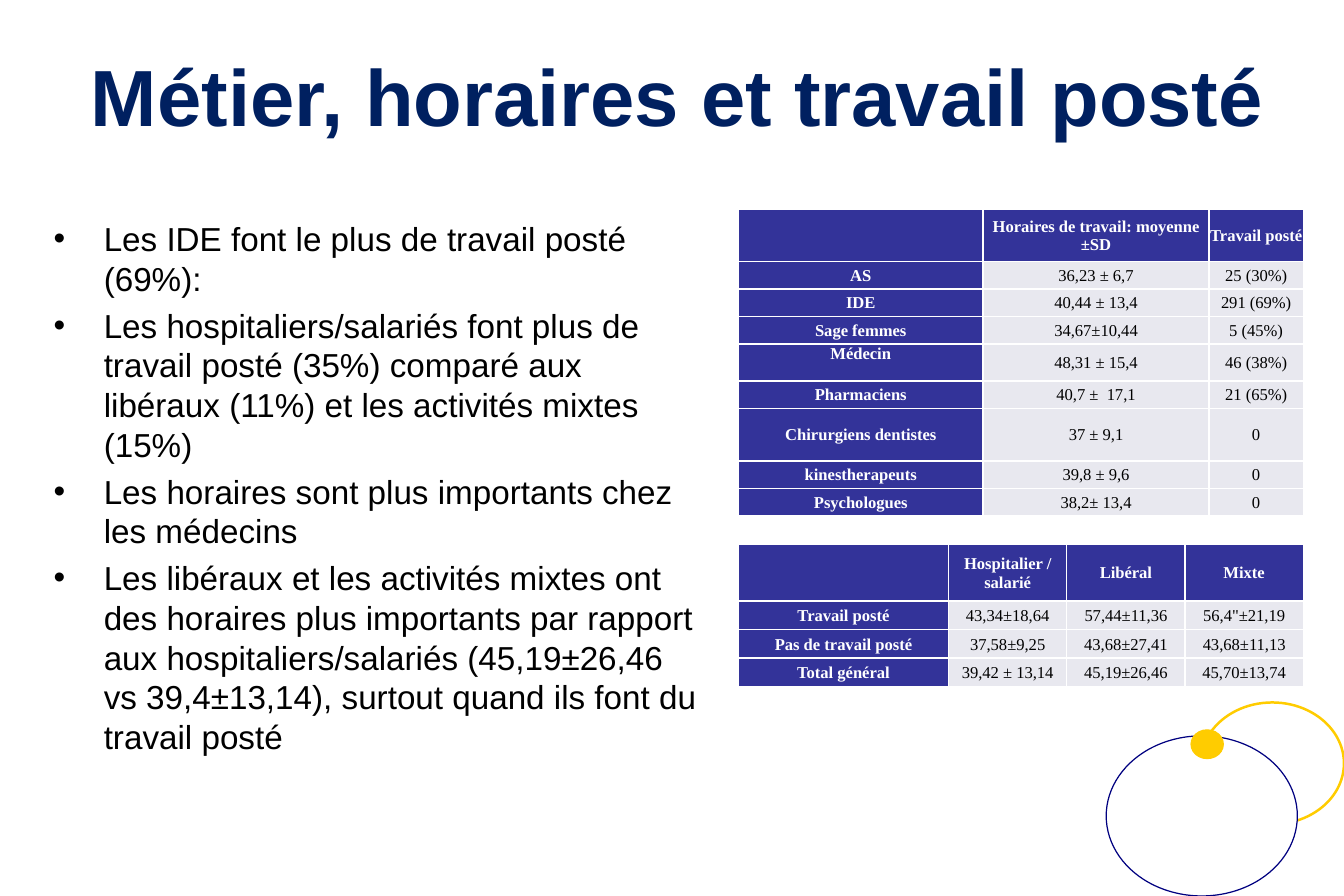
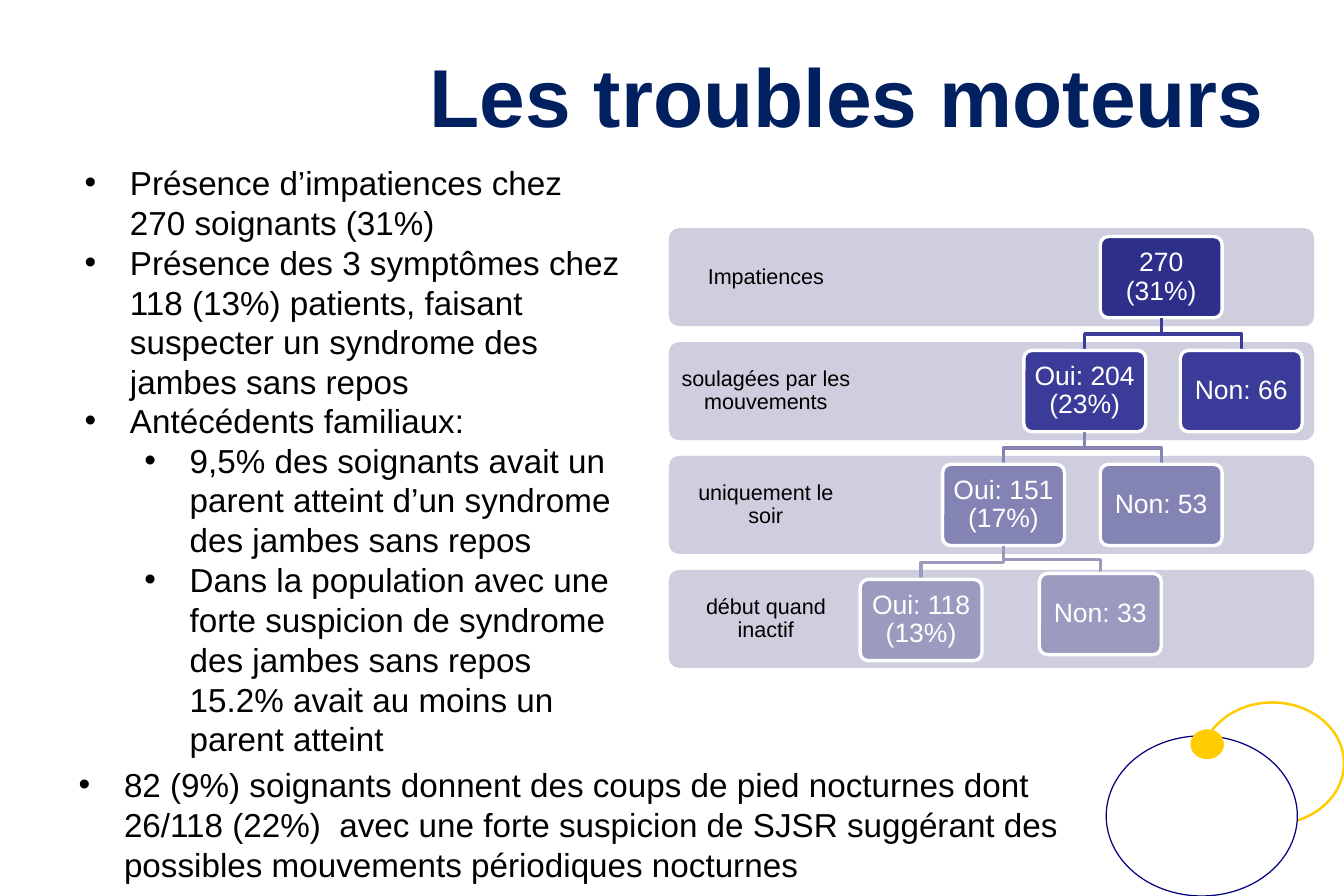
from lxml.etree import SubElement
from pptx import Presentation
from pptx.dml.color import RGBColor
from pptx.enum.shapes import MSO_SHAPE
from pptx.enum.text import MSO_ANCHOR, MSO_AUTO_SIZE, PP_ALIGN
from pptx.oxml.ns import qn
from pptx.util import Inches, Pt

WHITE = RGBColor(0xFF, 0xFF, 0xFF)
BLACK = RGBColor(0x00, 0x00, 0x00)
TITLE_NAVY = RGBColor(0x00, 0x20, 0x60)
RING_NAVY = RGBColor(0x00, 0x00, 0x80)
GOLD = RGBColor(0xFF, 0xCC, 0x00)
HEAD_BLUE = RGBColor(0x33, 0x33, 0x99)
CELL_GREY = RGBColor(0xE8, 0xE8, 0xEF)
BAND_GREY = RGBColor(0xCE, 0xCE, 0xDE)
LEVEL_COLORS = [RGBColor(0x2E, 0x2E, 0x8B), RGBColor(0x3B, 0x3B, 0x9A),
                RGBColor(0x84, 0x84, 0xB4), RGBColor(0x9B, 0x9B, 0xBF)]
SANS, SERIF = "Arial", "Times New Roman"

WORK_POINTS = [
    "Les IDE font le plus de travail posté (69%):",
    "Les hospitaliers/salariés font plus de travail posté (35%) comparé aux "
    "libéraux (11%) et les activités mixtes (15%)",
    "Les horaires sont plus importants chez les médecins",
    "Les libéraux et les activités mixtes ont des horaires plus importants par "
    "rapport aux hospitaliers/salariés (45,19±26,46 vs 39,4±13,14), surtout "
    "quand ils font du travail posté",
]
JOB_ROWS = [
    ["", "Horaires de travail: moyenne ±SD", "Travail posté"],
    ["AS", "36,23 ± 6,7", "25 (30%)"],
    ["IDE", "40,44 ± 13,4", "291 (69%)"],
    ["Sage femmes", "34,67±10,44", "5 (45%)"],
    ["Médecin", "48,31 ± 15,4", "46 (38%)"],
    ["Pharmaciens", "40,7 ±  17,1", "21 (65%)"],
    ["Chirurgiens dentistes", "37 ± 9,1", "0"],
    ["kinestherapeuts", "39,8 ± 9,6", "0"],
    ["Psychologues", "38,2± 13,4", "0"],
]
STATUS_ROWS = [
    ["", "Hospitalier / salarié", "Libéral", "Mixte"],
    ["Travail posté", "43,34±18,64", "57,44±11,36", "56,4\"±21,19"],
    ["Pas de travail posté", "37,58±9,25", "43,68±27,41", "43,68±11,13"],
    ["Total général", "39,42 ± 13,14", "45,19±26,46", "45,70±13,74"],
]
SYMPTOM_POINTS = [
    "Présence d’impatiences chez 270 soignants (31%)",
    "Présence des 3 symptômes chez 118 (13%) patients, faisant suspecter un "
    "syndrome des jambes sans repos",
]
FAMILY_POINTS = [
    "Antécédents familiaux:",
    "9,5% des soignants avait un parent atteint d’un syndrome des jambes sans repos",
    "Dans la population avec une forte suspicion de syndrome des jambes sans "
    "repos 15.2% avait au moins un parent atteint",
]
KICK_POINTS = [
    "82 (9%) soignants donnent des coups de pied nocturnes dont 26/118 (22%)  "
    "avec une forte suspicion de SJSR suggérant des possibles mouvements "
    "périodiques nocturnes",
]
BANDS = ["Impatiences", "soulagées par les mouvements", "uniquement le soir",
         "début quand inactif"]
# (text, level, left, top within band, parent)
NODES = [
    ("270 (31%)", 0, 3.61, 0.07, None),
    ("Oui: 204 (23%)", 1, 2.97, 0.07, 0),
    ("Non: 66", 1, 4.28, 0.07, 0),
    ("Oui: 151 (17%)", 2, 2.29, 0.07, 1),
    ("Non: 53", 2, 3.61, 0.07, 1),
    ("Oui: 118 (13%)", 3, 1.6, 0.08, 3),
    ("Non: 33", 3, 3.1, 0.03, 3),
]


def add_run(p, text, size, color, font=SANS, bold=False):
    """Add one formatted run to a paragraph."""
    r = p.add_run()
    r.text = text
    r.font.size, r.font.name, r.font.bold = Pt(size), font, bold
    r.font.color.rgb = color


def add_box(slide, kind, box, fill=None, line=None, width=1):
    """Add a flat preset shape at box, given in inches."""
    sp = slide.shapes.add_shape(kind, *map(Inches, box))
    sp.shadow.inherit = False
    if fill is None:
        sp.fill.background()
    else:
        sp.fill.solid()
        sp.fill.fore_color.rgb = fill
    if line is None:
        sp.line.fill.background()
    else:
        sp.line.color.rgb, sp.line.width = line, Pt(width)
    return sp


def add_rings(slide, layout):
    """Draw the corner rings and hand them to the shared layout."""
    for box, fill, line, width in [
            ((10.05, 5.88, 1.2, 1.02), None, GOLD, 1.5),
            ((9.26, 6.16, 1.6, 1.34), WHITE, RING_NAVY, 0.75),
            ((9.97, 6.11, 0.27, 0.24), GOLD, GOLD, 0.75)]:
        sp = add_box(slide, MSO_SHAPE.OVAL, box, fill, line, width)
        layout.shapes.element.append(sp.element)


def add_title(slide, text, size):
    """Place and format the title placeholder."""
    sp = slide.shapes.title
    sp.left, sp.top, sp.width, sp.height = map(Inches, (0.56, 0.17, 10.12, 1.25))
    tf = sp.text_frame
    tf.auto_size, tf.vertical_anchor = MSO_AUTO_SIZE.NONE, MSO_ANCHOR.MIDDLE
    p = tf.paragraphs[0]
    p.alignment = PP_ALIGN.RIGHT
    add_run(p, text, size, TITLE_NAVY, bold=True)


def add_bullets(slide, box, points, hang=0.38, gap=0, sub_from=None):
    """Add a bulleted text box; points from sub_from on are one level down."""
    tf = slide.shapes.add_textbox(*map(Inches, box)).text_frame
    tf.word_wrap = True
    for i, text in enumerate(points):
        p = tf.add_paragraph() if i else tf.paragraphs[0]
        sub = sub_from is not None and i >= sub_from
        p.level = int(sub)
        pPr = p._p.get_or_add_pPr()
        pPr.set("marL", str(Inches(hang + 0.5 * sub)))
        pPr.set("indent", str(-Inches(hang)))
        SubElement(pPr, qn("a:buFont")).set("typeface", SANS)
        SubElement(pPr, qn("a:buChar")).set("char", "•")
        p.space_before = Pt(gap if i else 0)
        add_run(p, text, 20, BLACK)


def add_grid(slide, left, top, rows, widths, heights):
    """Add a table with blue header row and column, and return it."""
    box = (left, top, sum(widths), sum(heights))
    table = slide.shapes.add_table(len(rows), len(widths), *map(Inches, box)).table
    for col, w in zip(table.columns, widths):
        col.width = Inches(w)
    for i, (row, h) in enumerate(zip(rows, heights)):
        table.rows[i].height = Inches(h)
        for j, text in enumerate(row):
            head = i == 0 or j == 0
            cell = table.cell(i, j)
            cell.fill.solid()
            cell.fill.fore_color.rgb = HEAD_BLUE if head else CELL_GREY
            cell.vertical_anchor = MSO_ANCHOR.MIDDLE
            cell.margin_left = cell.margin_right = cell.margin_top = Inches(0.01)
            cell.margin_bottom = 0
            if text:
                p = cell.text_frame.paragraphs[0]
                p.alignment = PP_ALIGN.CENTER
                add_run(p, text, 10, WHITE if head else BLACK, SERIF, head)
    return table


def fill_label(sp, text, size, color, inset):
    """Centre a tightly spaced label in a shape or text box."""
    tf = sp.text_frame
    tf.word_wrap, tf.vertical_anchor = True, MSO_ANCHOR.MIDDLE
    tf.margin_left = tf.margin_right = Inches(inset)
    tf.margin_top = tf.margin_bottom = Inches(inset)
    p = tf.paragraphs[0]
    p.alignment, p.line_spacing = PP_ALIGN.CENTER, 0.9
    add_run(p, text, size, color)


def add_elbow(slide, start, end, color):
    """Draw a stepped line from a parent down to a child."""
    (x1, y1), (x2, y2) = start, end
    mid = (y1 + y2) / 2
    points = [(Inches(x), Inches(y)) for x, y in [(x1, mid), (x2, mid), (x2, y2)]]
    fb = slide.shapes.build_freeform(Inches(x1), Inches(y1))
    fb.add_line_segments(points, close=False)
    sp = fb.convert_to_shape()
    sp.shadow.inherit = False
    sp.fill.background()
    sp.line.color.rgb, sp.line.width = color, Pt(2)


def add_tree(slide, left, top, width, height):
    """Draw the labelled bands and the decision tree over them."""
    band_h, node_w, node_h = 0.82, 1.02, 0.68
    pitch = (height - band_h) / (len(BANDS) - 1)
    for i, text in enumerate(BANDS):
        y = top + i * pitch
        sp = add_box(slide, MSO_SHAPE.ROUNDED_RECTANGLE,
                     (left, y, width, band_h), BAND_GREY)
        sp.adjustments[0] = 0.1
        label = (left, y, 0.3 * width, band_h)
        fill_label(slide.shapes.add_textbox(*map(Inches, label)), text, 13, BLACK, 0.1)
    corners = [(left + x, top + level * pitch + dy) for _, level, x, dy, _ in NODES]
    for (text, level, _, _, parent), (x, y) in zip(NODES, corners):
        color = LEVEL_COLORS[level]
        if parent is not None:
            px, py = corners[parent]
            add_elbow(slide, (px + node_w / 2, py + node_h), (x + node_w / 2, y), color)
        sp = add_box(slide, MSO_SHAPE.ROUNDED_RECTANGLE,
                     (x, y, node_w, node_h), color, WHITE, 2)
        sp.adjustments[0] = 0.1
        fill_label(sp, text, 16, WHITE, 0.06)


def build_work_slide(slide):
    """Fill the slide on jobs, hours and shift work."""
    add_title(slide, "Métier, horaires et travail posté", 48)
    add_bullets(slide, (0.35, 1.78, 5.61, 4.95), WORK_POINTS, hang=0.42, gap=4)
    jobs = add_grid(slide, 6.18, 1.75, JOB_ROWS, [2.05, 1.89, 0.79],
                    [0.44, 0.23, 0.23, 0.23, 0.31, 0.23, 0.44, 0.23, 0.23])
    jobs.cell(4, 0).vertical_anchor = MSO_ANCHOR.TOP
    add_grid(slide, 6.18, 4.56, STATUS_ROWS, [1.76] + [0.99] * 3, [0.47] + [0.24] * 3)


def build_motor_slide(slide):
    """Fill the slide on motor disorders."""
    add_title(slide, "Les troubles moteurs", 49.5)
    add_bullets(slide, (0.61, 3.3, 4.7, 3.13), FAMILY_POINTS, sub_from=1)
    add_bullets(slide, (0.61, 1.31, 4.7, 2.46), SYMPTOM_POINTS)
    add_tree(slide, 5.6, 1.91, 5.4, 3.68)
    add_bullets(slide, (0.56, 6.35, 8.69, 1.11), KICK_POINTS)


def main():
    """Build and save the presentation."""
    prs = Presentation()
    prs.slide_width, prs.slide_height = Inches(11.25), Inches(7.5)
    layout = prs.slide_layouts[5]
    work = prs.slides.add_slide(layout)
    add_rings(work, layout)
    build_work_slide(work)
    build_motor_slide(prs.slides.add_slide(layout))
    prs.save("out.pptx")


if __name__ == "__main__":
    main()
